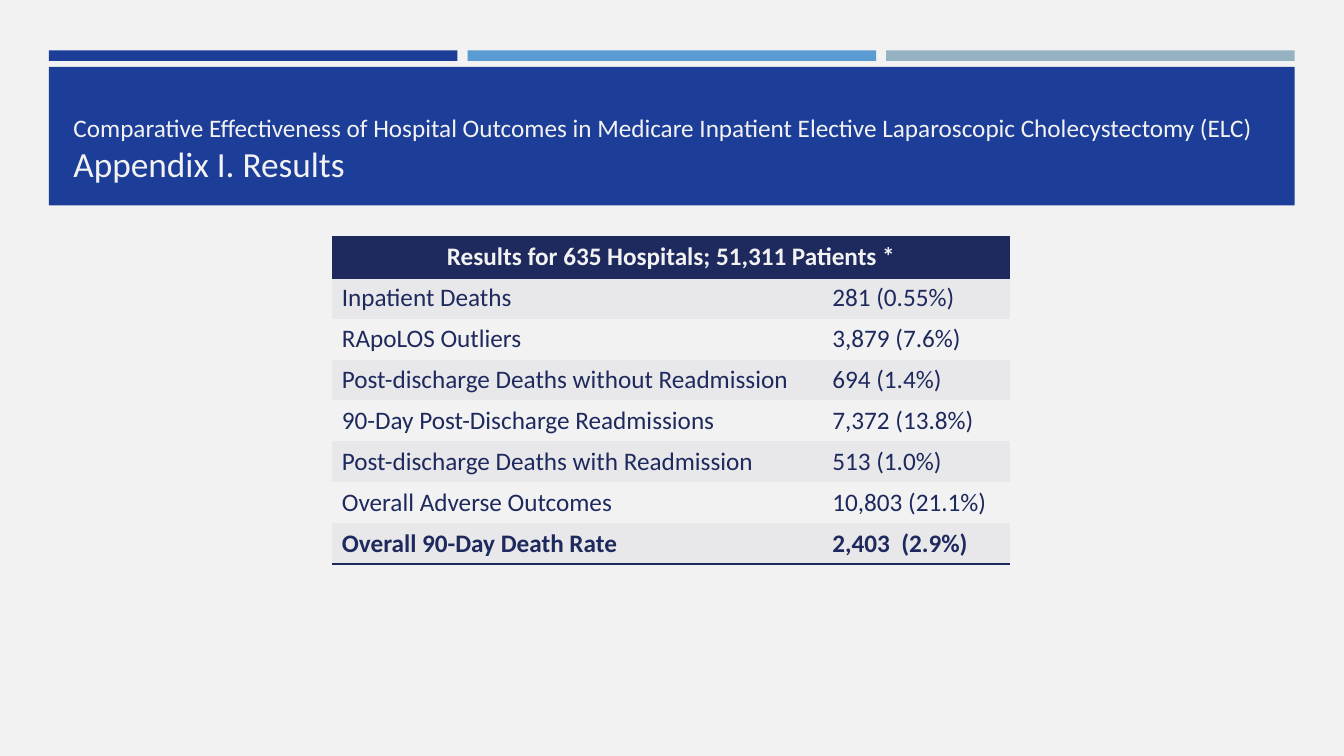
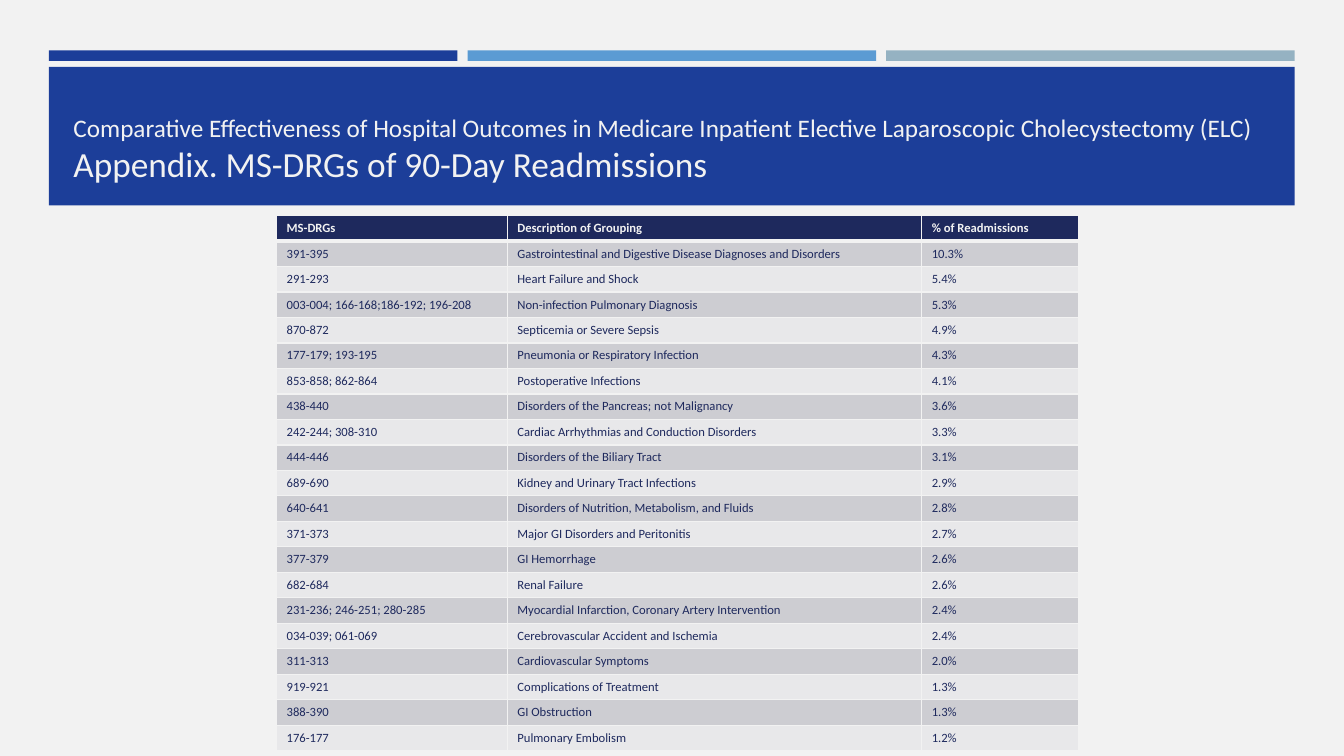
import dataclasses

import lxml.etree
import pptx
import pptx.dml.color
import pptx.enum.shapes
import pptx.enum.text
import pptx.oxml.ns
import pptx.util

Pt = pptx.util.Pt


@dataclasses.dataclass(frozen=True)
class Theme:
    """Colours, font and type sizes shared by the slides."""

    font: str = "Calibri"
    paper: str = "F2F2F2"
    navy: str = "1E295D"
    band: str = "1C3E99"
    stripes: tuple = ("1C3E99", "5B9BD3", "95B2C2")
    pale: str = "E8E8EA"
    grey: str = "CDCDD2"
    study_size: float = 18
    heading_size: float = 25.2
    results_size: float = 18
    groups_size: float = 9


THEME = Theme()
PLAIN_TABLE_STYLE = "{2D5ABB26-0587-4C30-8999-92F81FD0307C}"
STUDY = (
    "Comparative Effectiveness of Hospital Outcomes in Medicare "
    "Inpatient Elective Laparoscopic Cholecystectomy (ELC)"
)
RESULTS = [
    ("Results for 635 Hospitals; 51,311 Patients *", ""),
    ("Inpatient Deaths", "281 (0.55%)"),
    ("RApoLOS Outliers", "3,879 (7.6%)"),
    ("Post-discharge Deaths without Readmission", "694 (1.4%)"),
    ("90-Day Post-Discharge Readmissions", "7,372 (13.8%)"),
    ("Post-discharge Deaths with Readmission", "513 (1.0%)"),
    ("Overall Adverse Outcomes", "10,803 (21.1%)"),
    ("Overall 90-Day Death Rate", "2,403  (2.9%)"),
]
GROUPS = [
    ("MS-DRGs", "Description of Grouping", "% of Readmissions"),
    ("391-395", "Gastrointestinal and Digestive Disease Diagnoses and Disorders", "10.3%"),
    ("291-293", "Heart Failure and Shock", "5.4%"),
    ("003-004; 166-168;186-192; 196-208", "Non-infection Pulmonary Diagnosis", "5.3%"),
    ("870-872", "Septicemia or Severe Sepsis", "4.9%"),
    ("177-179; 193-195", "Pneumonia or Respiratory Infection", "4.3%"),
    ("853-858; 862-864", "Postoperative Infections", "4.1%"),
    ("438-440", "Disorders of the Pancreas; not Malignancy", "3.6%"),
    ("242-244; 308-310", "Cardiac Arrhythmias and Conduction Disorders", "3.3%"),
    ("444-446", "Disorders of the Biliary Tract", "3.1%"),
    ("689-690", "Kidney and Urinary Tract Infections", "2.9%"),
    ("640-641", "Disorders of Nutrition, Metabolism, and Fluids", "2.8%"),
    ("371-373", "Major GI Disorders and Peritonitis", "2.7%"),
    ("377-379", "GI Hemorrhage", "2.6%"),
    ("682-684", "Renal Failure", "2.6%"),
    ("231-236; 246-251; 280-285", "Myocardial Infarction, Coronary Artery Intervention", "2.4%"),
    ("034-039; 061-069", "Cerebrovascular Accident and Ischemia", "2.4%"),
    ("311-313", "Cardiovascular Symptoms", "2.0%"),
    ("919-921", "Complications of Treatment", "1.3%"),
    ("388-390", "GI Obstruction", "1.3%"),
    ("176-177", "Pulmonary Embolism", "1.2%"),
]


def paint(fill, colour):
    """Make a fill solid in the given colour."""
    fill.solid()
    fill.fore_color.rgb = pptx.dml.color.RGBColor.from_string(colour)


def write(para, text, *, size, colour, bold=False, align=pptx.enum.text.PP_ALIGN.LEFT):
    """Add formatted text to a paragraph."""
    para.alignment = align
    span = para.add_run()
    span.text = text
    span.font.name = THEME.font
    span.font.size = Pt(size)
    span.font.bold = bold
    span.font.color.rgb = pptx.dml.color.RGBColor.from_string(colour)


def add_block(page, box, colour):
    """Draw a plain filled rectangle."""
    block = page.shapes.add_shape(
        pptx.enum.shapes.MSO_SHAPE.RECTANGLE, *(Pt(length) for length in box)
    )
    block.shadow.inherit = False
    paint(block.fill, colour)
    block.line.fill.background()


def add_header(page, box, heading):
    """Draw the three stripes and the title band inside the box."""
    left, top, width, height = box
    gap, stripe_height, band_offset = 7.2, 7.5, 11.8
    stripe_width = (width - 2 * gap) / 3
    for index, colour in enumerate(THEME.stripes):
        stripe_left = left + index * (stripe_width + gap)
        add_block(page, (stripe_left, top, stripe_width, stripe_height), colour)
    add_block(page, (left, top + band_offset, width, height - band_offset), THEME.band)
    title = page.shapes.add_textbox(
        Pt(left + 10.4), Pt(top + 21.6), Pt(width - 21.6), Pt(height - 33)
    )
    title.text_frame.word_wrap = True
    title.text_frame.vertical_anchor = pptx.enum.text.MSO_ANCHOR.BOTTOM
    para = title.text_frame.paragraphs[0]
    write(para, STUDY, size=THEME.study_size, colour=THEME.paper)
    para.add_line_break()
    write(para, heading, size=THEME.heading_size, colour=THEME.paper)


def set_borders(cell, colour, widths):
    """Draw cell edges, with widths in points keyed by L, R, T and B."""
    properties = cell._tc.get_or_add_tcPr()
    for side in "LRTB":
        if side in widths:
            line = lxml.etree.SubElement(
                properties, pptx.oxml.ns.qn(f"a:ln{side}"), w=str(Pt(widths[side]))
            )
            solid = lxml.etree.SubElement(line, pptx.oxml.ns.qn("a:solidFill"))
            lxml.etree.SubElement(solid, pptx.oxml.ns.qn("a:srgbClr"), val=colour)


def add_grid(page, corner, columns, row_height, rows, size, stripes, borders, border_colour, bold_rows):
    """Place a table with a dark first row and alternating stripes."""
    left, top = corner
    frame = page.shapes.add_table(
        len(rows), len(columns), Pt(left), Pt(top), Pt(sum(columns)), Pt(row_height * len(rows))
    )
    table = frame.table
    style = table._tbl.tblPr.find(pptx.oxml.ns.qn("a:tableStyleId"))
    style.text = PLAIN_TABLE_STYLE
    for column, width in zip(table.columns, columns):
        column.width = Pt(width)
    for index, values in enumerate(rows):
        table.rows[index].height = Pt(row_height)
        colour = THEME.paper if index == 0 else THEME.navy
        for cell, value in zip(table.rows[index].cells, values):
            set_borders(cell, border_colour, borders(index))
            paint(cell.fill, THEME.navy if index == 0 else stripes[(index - 1) % 2])
            if value:
                write(
                    cell.text_frame.paragraphs[0],
                    value,
                    size=size,
                    colour=colour,
                    bold=index in bold_rows,
                )
    return table


def add_results(page, corner):
    """Place the table of outcomes."""
    last = len(RESULTS) - 1
    edges = {0: {"T": 2, "B": 2}, last: {"B": 2}}
    table = add_grid(
        page,
        corner,
        columns=(350.4, 134.4),
        row_height=29.2,
        rows=RESULTS,
        size=THEME.results_size,
        stripes=(THEME.pale, THEME.paper),
        borders=lambda index: edges.get(index, {}),
        border_colour=THEME.navy,
        bold_rows=(0, last),
    )
    heading = table.cell(0, 0)
    heading.merge(table.cell(0, 1))
    heading.text_frame.paragraphs[0].alignment = pptx.enum.text.PP_ALIGN.CENTER


def add_groups(page, corner):
    """Place the table of readmission groups."""
    add_grid(
        page,
        corner,
        columns=(164.8, 296, 112.4),
        row_height=18.2,
        rows=GROUPS,
        size=THEME.groups_size,
        stripes=(THEME.grey, THEME.pale),
        borders=lambda index: {
            "L": 1,
            "R": 1,
            "T": 3 if index == 1 else 1,
            "B": 3 if index == 0 else 1,
        },
        border_colour=THEME.paper,
        bold_rows=(0,),
    )


def add_page(deck, heading, add_content, corner):
    """Add a slide with the shared header and its table."""
    page = deck.slides.add_slide(deck.slide_layouts[6])
    paint(page.background.fill, THEME.paper)
    add_header(page, (35, 36, 889.8, 110.8), heading)
    add_content(page, corner)


def main():
    """Build and save the deck."""
    deck = pptx.Presentation()
    deck.slide_width, deck.slide_height = Pt(960), Pt(540)
    add_page(deck, "Appendix I. Results", add_results, (237, 169.2))
    add_page(deck, "Appendix. MS-DRGs of 90-Day Readmissions", add_groups, (197.6, 154))
    deck.save("out.pptx")


if __name__ == "__main__":
    main()
